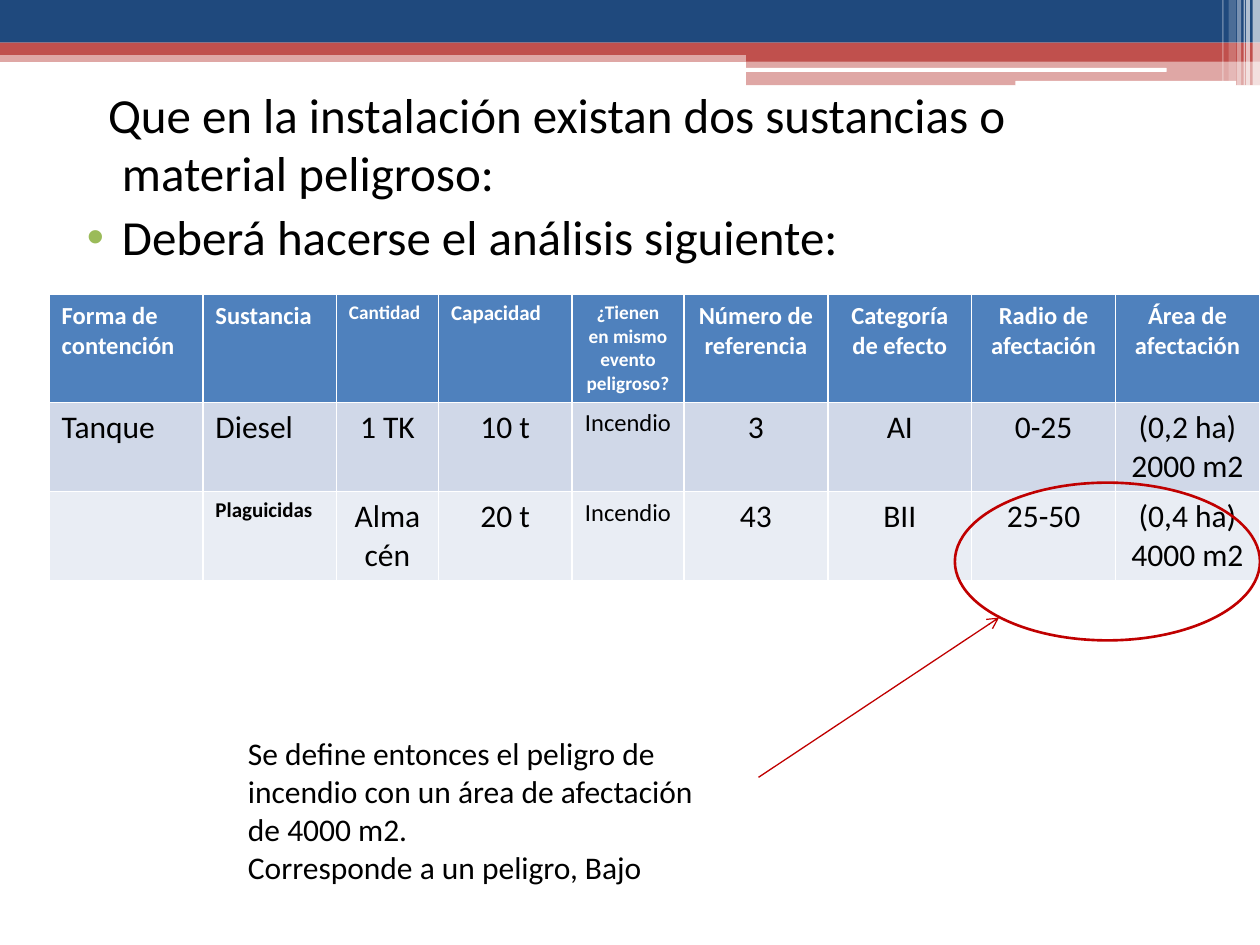
from lxml.etree import SubElement as Sub
from pptx import Presentation
from pptx.dml.color import RGBColor as RGB
from pptx.enum.shapes import MSO_CONNECTOR as Link, MSO_SHAPE as Kind
from pptx.enum.text import PP_ALIGN as Align
from pptx.oxml.ns import qn
from pptx.util import Cm, Pt

HUES = {
    "navy": "1F497D", "red": "C0504D", "white": "FFFFFF", "black": "000000",
    "head": "4F81BD", "odd": "D0D8E8", "even": "E9EDF4",
    "mark": "C00000", "green": "9BBB59",
}
BANDS = [
    (0, 1.02, 25.4, 0.23, "red", 50),
    (0, 0, 25.4, 0.86, "navy", 100),
    (0, 0.86, 25.4, 0.25, "red", 100),
    (15.04, 0.99, 10.36, 0.25, "red", 100),
    (15.04, 1.22, 10.36, 0.5, "red", 50),
]
PILLS = [
    (15.01, 1.37, 8.51, 0.08, "white", 100),
    (20.47, 1.63, 4.45, 0.1, "white", 100),
]
BARS = [
    (25.25, 0.15, 1.73, 65), (25.12, 0.08, 1.73, 65), (25.07, 0.03, 1.73, 60),
    (24.94, 0.08, 1.73, 40), (24.77, 0.15, 1.63, 20), (24.64, 0.03, 1.63, 30),
]
WIDTHS = [3.1, 2.69, 2.06, 2.69, 2.26] + [2.9] * 4
HEIGHTS = [2.17, 1.8, 1.8]
FILLS = ["head", "odd", "even"]
ROWS = [
    ["Forma de contención", "Sustancia", "Cantidad", "Capacidad",
     "¿Tienen en mismo evento peligroso?", "Número de referencia",
     "Categoría de efecto", "Radio de afectación", "Área de afectación"],
    ["Tanque", "Diesel", "1 TK", "10 t", "Incendio", "3", "AI", "0-25",
     "(0,2 ha)\n2000 m2"],
    ["", "Plaguicidas", "Almacén", "20 t", "Incendio", "43", "BII", "25-50",
     "(0,4 ha)\n4000 m2"],
]
SIZES = [
    [14, 14, 11, 12, 11, 14, 14, 14, 14],
    [18, 18, 18, 18, 14, 18, 18, 18, 18],
    [18, 12, 18, 18, 14, 18, 18, 18, 18],
]


def hue(name):
    return RGB.from_string(HUES[name])


def style(para, size, name="black", bold=False):
    font = para.font
    font.name, font.size, font.bold = "Calibri", Pt(size), bold
    font.color.rgb = hue(name)


def add_band(slide, x, y, w, h, name, alpha, kind=Kind.RECTANGLE):
    band = slide.shapes.add_shape(kind, Cm(x), Cm(y), Cm(w), Cm(h))
    band.shadow.inherit = False
    band.fill.solid()
    band.fill.fore_color.rgb = hue(name)
    band.line.fill.background()
    if alpha < 100:
        tint = band.fill._xPr.find(".//" + qn("a:srgbClr"))
        Sub(tint, qn("a:alpha"), val=str(alpha * 1000))


def add_text(slide, x, y, w, h, lines, size):
    box = slide.shapes.add_textbox(Cm(x), Cm(y), Cm(w), Cm(h))
    frame = box.text_frame
    frame.word_wrap = True
    frame.text = "\n".join(lines)
    for para in frame.paragraphs:
        style(para, size)
    return frame.paragraphs


def indent(para, left, first):
    props = para._p.get_or_add_pPr()
    props.set("marL", str(Cm(left)))
    props.set("indent", str(Cm(first)))
    return props


def add_intro(slide):
    lines = ["Que en la instalación existan dos sustancias o material peligroso:",
             "Deberá hacerse el análisis siguiente:"]
    lead, item = add_text(slide, 1.19, 1.57, 22.86, 4.17, lines, 28)
    lead.space_before = item.space_before = Pt(3)
    indent(lead, 1.02, -0.28)
    props = indent(item, 1.02, -0.71)
    tint = Sub(props, qn("a:buClr"))
    Sub(tint, qn("a:srgbClr"), val=HUES["green"])
    Sub(props, qn("a:buFont"), typeface="Arial")
    Sub(props, qn("a:buChar"), char="•")
    props.append(props.find(qn("a:defRPr")))


def add_grid(slide):
    grid = slide.shapes.add_table(
        len(ROWS), len(WIDTHS), Cm(0.99), Cm(5.94),
        Cm(sum(WIDTHS)), Cm(sum(HEIGHTS))).table
    for col, width in zip(grid.columns, WIDTHS):
        col.width = Cm(width)
    for r, texts in enumerate(ROWS):
        grid.rows[r].height = Cm(HEIGHTS[r])
        for c, text in enumerate(texts):
            cell = grid.cell(r, c)
            cell.fill.solid()
            cell.fill.fore_color.rgb = hue(FILLS[r])
            cell.text = text
            left = c < (2 if r else 4)
            for para in cell.text_frame.paragraphs:
                para.alignment = Align.LEFT if left else Align.CENTER
                style(para, SIZES[r][c], "black" if r else "white",
                      r == 0 or text == "Plaguicidas")


def add_ring(slide, x, y, w, h):
    ring = slide.shapes.add_shape(Kind.OVAL, Cm(x), Cm(y), Cm(w), Cm(h))
    ring.shadow.inherit = False
    ring.fill.background()
    ring.line.color.rgb = hue("mark")
    ring.line.width = Pt(1.5)


def add_arrow(slide, x, y, to_x, to_y):
    arrow = slide.shapes.add_connector(
        Link.STRAIGHT, Cm(x), Cm(y), Cm(to_x), Cm(to_y))
    arrow.line.color.rgb = hue("mark")
    arrow.line.width = Pt(0.75)
    Sub(arrow.line._get_or_add_ln(), qn("a:tailEnd"), type="arrow")
    Sub(arrow._element.spPr, qn("a:effectLst"))


def main():
    deck = Presentation()
    deck.slide_width, deck.slide_height = Cm(25.4), Cm(19.05)
    slide = deck.slides.add_slide(deck.slide_layouts[6])
    for band in BANDS:
        add_band(slide, *band)
    for pill in PILLS:
        add_band(slide, *pill, Kind.ROUNDED_RECTANGLE)
    for x, w, h, alpha in BARS:
        add_band(slide, x, 0, w, h, "white", alpha)
    add_intro(slide)
    add_grid(slide)
    add_ring(slide, 19.25, 9.73, 6.15, 3.18)
    add_arrow(slide, 15.29, 15.67, 20.14, 12.45)
    add_text(slide, 4.75, 14.68, 10.11, 3.33, [
        "Se define entonces el peligro de incendio con un área de afectación de 4000 m2.",
        "Corresponde a un peligro, Bajo"], 18)
    deck.save("out.pptx")


if __name__ == "__main__":
    main()
